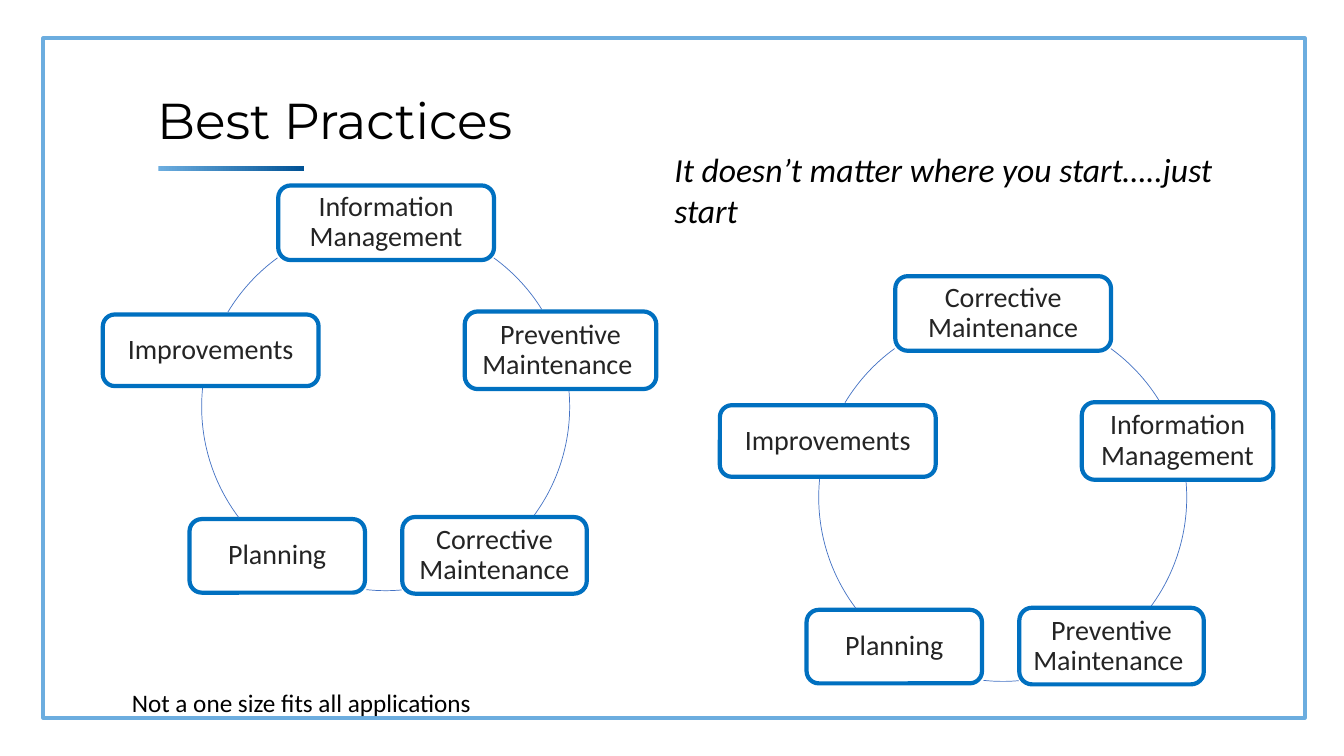
from pptx import Presentation
from pptx.dml.color import RGBColor
from pptx.enum.shapes import MSO_SHAPE as Preset
from pptx.enum.text import MSO_ANCHOR as Anchor, PP_ALIGN as Align
from pptx.util import Pt

EMU_PER_PX = 9144
NODE_BOXES = [
    (174, 0, 214, 74),
    (359, 125, 190, 77),
    (297, 329, 183, 76),
    (86, 331, 174, 73),
    (0, 128, 214, 71),
]
ARC_ANGLES = [(306, 328), (355, 37), (85, 96), (143, 186), (211, 234)]
RING = (98, 37, 365, 365)


def px(*lengths):
    """Turn whole px lengths into EMU."""
    return [length * EMU_PER_PX for length in lengths]


def color(value):
    """Turn a hex string into a colour."""
    return RGBColor.from_string(value)


def add_outline(page, preset, box, line, width):
    """Add an unfilled shape with a coloured outline."""
    shape = page.shapes.add_shape(preset, *px(*box))
    shape.shadow.inherit = False
    shape.fill.background()
    shape.line.color.rgb = color(line)
    shape.line.width = Pt(width)
    return shape


def style(para, size, ink="000000", name="Calibri", italic=False):
    """Set the font of a whole paragraph."""
    para.font.name = name
    para.font.size = Pt(size)
    para.font.italic = italic
    para.font.color.rgb = color(ink)


def add_text(page, box, text, size, wrap=True, **font):
    """Add a text box with one paragraph."""
    frame = page.shapes.add_textbox(*px(*box)).text_frame
    frame.word_wrap = wrap
    frame.text = text
    style(frame.paragraphs[0], size, **font)


def add_heading(page, left, top):
    """Add the title with its gradient underline."""
    add_text(page, (left, top, 385, 71), "Best Practices", 36,
             wrap=False, name="Montserrat")
    bar = page.shapes.add_shape(Preset.RECTANGLE, *px(left + 11, top + 82, 145, 5))
    bar.shadow.inherit = False
    bar.line.fill.background()
    bar.fill.gradient()
    bar.fill.gradient_angle = 0
    for stop, shade in zip(bar.fill.gradient_stops, ("6CADDF", "005295")):
        stop.color.rgb = color(shade)


def add_node(page, box, label):
    """Add one rounded step of a cycle."""
    node = add_outline(page, Preset.ROUNDED_RECTANGLE, box, "0070C0", 3)
    frame = node.text_frame
    frame.word_wrap = True
    frame.vertical_anchor = Anchor.MIDDLE
    frame.margin_left, frame.margin_top = px(8, 8)
    frame.margin_right, frame.margin_bottom = px(8, 8)
    frame.text = label
    para = frame.paragraphs[0]
    para.alignment = Align.CENTER
    para.line_spacing = 0.9
    style(para, 20, ink="242424")


def add_cycle(page, left, top, labels):
    """Add a ring of five steps joined by arcs."""
    ring_left, ring_top, *ring_size = RING
    ring = (left + ring_left, top + ring_top, *ring_size)
    for (dx, dy, width, height), angles, label in zip(NODE_BOXES, ARC_ANGLES, labels):
        add_node(page, (left + dx, top + dy, width, height), label)
        arc = add_outline(page, Preset.ARC, ring, "4472C4", 0.5)
        for index, angle in enumerate(angles):
            arc.adjustments[index] = angle * 0.6


def main():
    """Build and save the slide."""
    deck = Presentation()
    deck.slide_width, deck.slide_height = px(1333, 750)
    page = deck.slides.add_slide(deck.slide_layouts[6])
    add_outline(page, Preset.RECTANGLE, (43, 38, 1251, 674), "6CADDF", 3)
    add_heading(page, 146, 83)
    add_text(page, (121, 677, 554, 40), "Not a one size fits all applications", 18)
    add_cycle(page, 102, 184, [
        "Information Management", "Preventive Maintenance ",
        "Corrective Maintenance", "Planning", "Improvements"])
    add_cycle(page, 714, 274, [
        "Corrective Maintenance", "Information Management",
        "Preventive Maintenance ", "Planning", "Improvements"])
    add_text(page, (659, 143, 554, 91),
             "It doesn’t matter where you start…..just start", 24, italic=True)
    deck.save("out.pptx")


if __name__ == "__main__":
    main()
